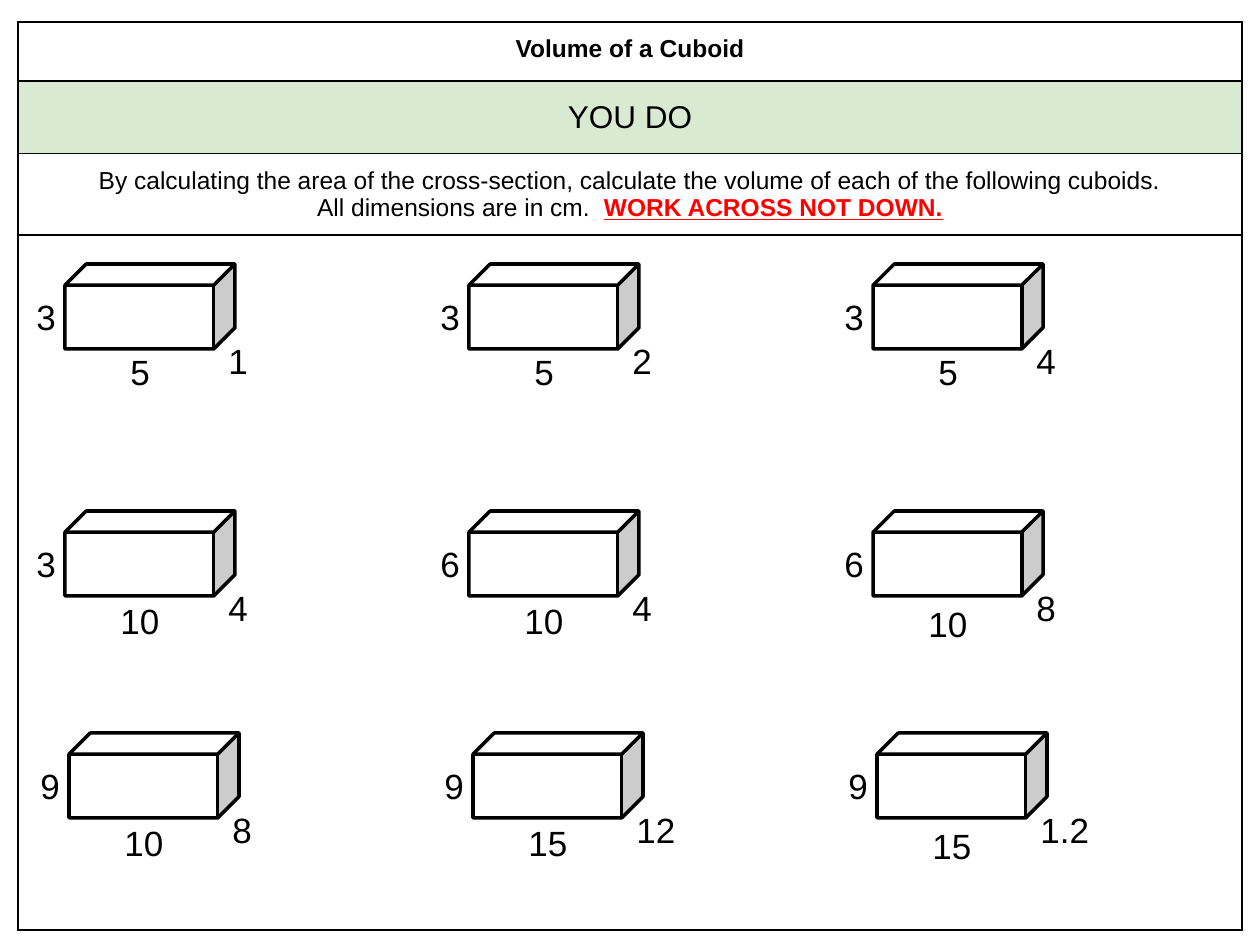
from typing import NamedTuple

from lxml.etree import SubElement
from pptx import Presentation
from pptx.dml.color import RGBColor
from pptx.enum.shapes import MSO_SHAPE
from pptx.enum.text import MSO_ANCHOR, MSO_AUTO_SIZE, PP_ALIGN
from pptx.oxml.ns import qn
from pptx.util import Emu, Pt

FONT = "Arial"
BLACK, WHITE, RED, GREEN = "000000", "FFFFFF", "FF0000", "D9EAD3"
CELL_INSET = 13
CUBOID_WIDTH, CUBOID_HEIGHT = 170, 85
COLUMN_PITCH = 404
LABEL_HEIGHT = 55
LABEL_WIDTHS = {"1": 45, "10": 64, "1.2": 74}
WIDTH_BY_LENGTH = {len(sample): width for sample, width in LABEL_WIDTHS.items()}


class Run(NamedTuple):
    text: str
    color: str = BLACK
    bold: bool = False
    underline: bool = False


class Band(NamedTuple):
    height: int
    lines: tuple[tuple[Run, ...], ...] = ()
    size: int = 14
    fill: str | None = None
    anchor: MSO_ANCHOR = MSO_ANCHOR.MIDDLE


class Cuboid(NamedTuple):
    height: str
    length: str
    depth: str
    length_drop: int


class CuboidRow(NamedTuple):
    left: int
    top: int
    cuboids: tuple[Cuboid, ...]


BANDS = (
    Band(59, ((Run("Volume of a Cuboid", bold=True),),), anchor=MSO_ANCHOR.TOP),
    Band(73, ((Run("YOU DO"),),), size=18, fill=GREEN),
    Band(81, (
        (Run("By calculating the area of the cross-section, calculate "
             "the volume of each of the following cuboids."),),
        (Run("All dimensions are in cm.  "),
         Run("WORK ACROSS NOT DOWN.", RED, bold=True, underline=True)),
    )),
    Band(695),
)

CUBOID_ROWS = (
    CuboidRow(65, 264, (Cuboid("3", "5", "1", 80), Cuboid("3", "5", "2", 80),
                        Cuboid("3", "5", "4", 80))),
    CuboidRow(65, 511, (Cuboid("3", "10", "4", 82), Cuboid("6", "10", "4", 82),
                        Cuboid("6", "10", "8", 85))),
    CuboidRow(69, 733, (Cuboid("9", "10", "8", 82), Cuboid("9", "15", "12", 82),
                        Cuboid("9", "15", "1.2", 85))),
)


def px(length: int) -> Emu:
    return Emu(round(length * 914400 / 126))


def rgb(color: str) -> RGBColor:
    return RGBColor.from_string(color)


def add_borders(cell) -> None:
    properties = cell._tc.get_or_add_tcPr()
    for side in ("a:lnL", "a:lnR", "a:lnT", "a:lnB"):
        border = SubElement(properties, qn(side), w=str(Pt(0.75)))
        fill = SubElement(border, qn("a:solidFill"))
        SubElement(fill, qn("a:srgbClr"), val=BLACK)


def fill_cell(cell, band: Band) -> None:
    add_borders(cell)
    if band.fill:
        cell.fill.solid()
        cell.fill.fore_color.rgb = rgb(band.fill)
    else:
        cell.fill.background()
    cell.vertical_anchor = band.anchor
    cell.margin_left = cell.margin_right = px(CELL_INSET)
    cell.margin_top = cell.margin_bottom = px(CELL_INSET)
    frame = cell.text_frame
    for index, line in enumerate(band.lines):
        paragraph = frame.add_paragraph() if index else frame.paragraphs[0]
        paragraph.alignment = PP_ALIGN.CENTER
        paragraph.font.name = FONT
        paragraph.font.size = Pt(band.size)
        for part in line:
            run = paragraph.add_run()
            run.text = part.text
            run.font.color.rgb = rgb(part.color)
            run.font.bold = part.bold
            run.font.underline = part.underline


def add_worksheet(slide) -> None:
    total = sum(band.height for band in BANDS)
    worksheet = slide.shapes.add_table(
        len(BANDS), 1, px(18), px(22), px(1224), px(total)).table
    worksheet.first_row = worksheet.horz_banding = False
    for index, band in enumerate(BANDS):
        worksheet.rows[index].height = px(band.height)
        fill_cell(worksheet.cell(index, 0), band)


def add_dimension(slide, text: str, left: int, top: int) -> None:
    dimension = slide.shapes.add_textbox(
        px(left), px(top), px(WIDTH_BY_LENGTH[len(text)]), px(LABEL_HEIGHT))
    frame = dimension.text_frame
    frame.word_wrap = False
    frame.auto_size = MSO_AUTO_SIZE.SHAPE_TO_FIT_TEXT
    paragraph = frame.paragraphs[0]
    paragraph.text = text
    paragraph.font.name = FONT
    paragraph.font.size = Pt(20)
    paragraph.font.color.rgb = rgb(BLACK)


def add_cuboid(slide, cuboid: Cuboid, left: int, top: int) -> None:
    solid = slide.shapes.add_shape(
        MSO_SHAPE.CUBE, px(left), px(top), px(CUBOID_WIDTH), px(CUBOID_HEIGHT))
    solid.shadow.inherit = False
    solid.fill.solid()
    solid.fill.fore_color.rgb = rgb(WHITE)
    solid.line.color.rgb = rgb(BLACK)
    solid.line.width = Pt(2)
    length_left = left + 75 - WIDTH_BY_LENGTH[len(cuboid.length)] // 2
    add_dimension(slide, cuboid.height, left - 41, top + 25)
    add_dimension(slide, cuboid.depth, left + 151, top + 69)
    add_dimension(slide, cuboid.length, length_left, top + cuboid.length_drop)


def main() -> None:
    presentation = Presentation()
    presentation.slide_width = px(1260)
    presentation.slide_height = px(945)
    slide = presentation.slides.add_slide(presentation.slide_layouts[6])
    add_worksheet(slide)
    for row in CUBOID_ROWS:
        for column, cuboid in enumerate(row.cuboids):
            add_cuboid(slide, cuboid, row.left + column * COLUMN_PITCH, row.top)
    presentation.save("out.pptx")


if __name__ == "__main__":
    main()
